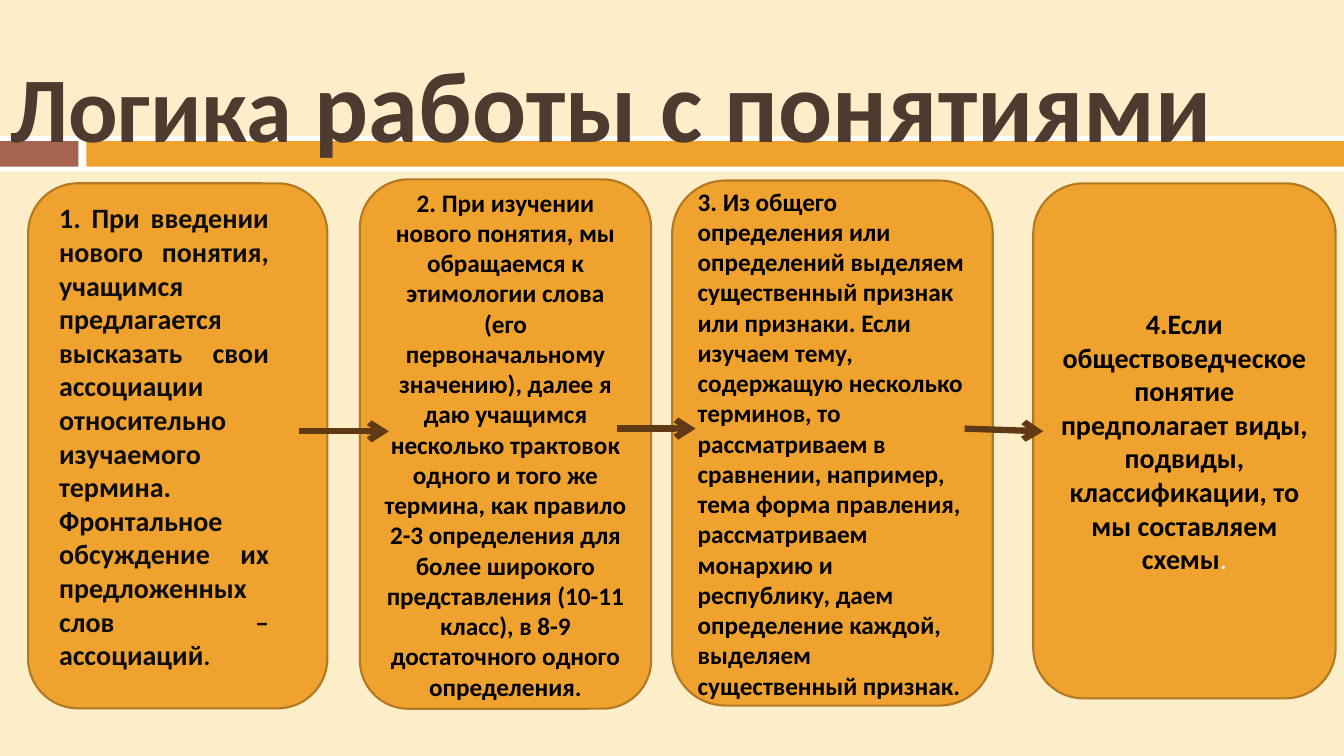
from pptx import Presentation
from pptx.dml.color import RGBColor
from pptx.enum.shapes import MSO_CONNECTOR as Connector, MSO_SHAPE as Shape
from pptx.enum.text import MSO_ANCHOR as Anchor, MSO_AUTO_SIZE as AutoSize, PP_ALIGN as Align
from pptx.oxml.ns import qn
from pptx.util import Cm, Pt
from lxml.etree import SubElement

COLORS = {
    "cream": "FBEEC9", "white": "FFFFFF", "brick": "A5644E", "amber": "F0A22E",
    "border": "B27822", "title": "4E3B30", "arrow": "603A14",
    "black": "000000", "ink": "0D0D0D",
}


def color(name):
    return RGBColor.from_string(COLORS[name])


def style(font, size, name):
    font.name = "Calibri"
    font.size = Pt(size)
    font.bold = True
    font.color.rgb = color(name)


deck = Presentation()
deck.slide_width, deck.slide_height = Cm(33.87), Cm(19.05)
page = deck.slides.add_slide(deck.slide_layouts[5])
page.background.fill.solid()
page.background.fill.fore_color.rgb = color("cream")

bands = [
    (0, 3.43, 33.87, 0.89, "white"),
    (0, 3.56, 1.98, 0.64, "brick"),
    (2.18, 3.56, 31.69, 0.64, "amber"),
]
for left, top, width, height, fill in bands:
    band = page.shapes.add_shape(Shape.RECTANGLE, Cm(left), Cm(top), Cm(width), Cm(height))
    band.shadow.inherit = False
    band.fill.solid()
    band.fill.fore_color.rgb = color(fill)
    band.line.fill.background()

title = page.shapes.title
title.left, title.top, title.width, title.height = Cm(0), Cm(3.07), Cm(33.87), Cm(1.45)
page.shapes._spTree.append(title._element)
frame = title.text_frame
frame.auto_size = AutoSize.NONE
frame.vertical_anchor = Anchor.BOTTOM
frame.margin_bottom = Cm(0.43)
para = frame.paragraphs[0]
para.alignment = Align.LEFT
for text, size in [("Логика", 66), (" работы с понятиями", 72)]:
    span = para.add_run()
    span.text = text
    style(span.font, size, "title")

cards = [
    (26.04, 4.62, 7.62, 12.98, 20, Align.CENTER,
     "4.Если обществоведческое понятие предполагает виды, подвиды, классификации, то мы составляем схемы"),
    (16.94, 4.55, 8.08, 13.23, 18, Align.LEFT,
     "3. Из общего определения или определений выделяем существенный признак или признаки. "
     "Если изучаем тему, содержащую несколько терминов, то рассматриваем в сравнении, например, "
     "тема форма правления, рассматриваем монархию и республику, даем определение каждой, "
     "выделяем существенный признак."),
    (9.07, 4.52, 7.34, 13.34, 18, Align.CENTER,
     "2. При изучении нового понятия, мы обращаемся к этимологии слова (его первоначальному значению), "
     "далее я даю учащимся несколько трактовок одного и того же термина, как правило 2-3 определения "
     "для более широкого представления (10-11 класс), в 8-9 достаточного одного определения."),
    (0.71, 4.62, 7.54, 13.23, 20, Align.LEFT, ""),
]
card_paras = []
for left, top, width, height, size, alignment, text in cards:
    card = page.shapes.add_shape(Shape.ROUNDED_RECTANGLE, Cm(left), Cm(top), Cm(width), Cm(height))
    card.shadow.inherit = False
    card.fill.solid()
    card.fill.fore_color.rgb = color("amber")
    card.line.color.rgb = color("border")
    card.line.width = Pt(1.5)
    card.text_frame.vertical_anchor = Anchor.MIDDLE
    para = card.text_frame.paragraphs[0]
    para.alignment = alignment
    style(para.font, size, "black")
    if text:
        para.add_run().text = text
    card_paras.append(para)

full_stop = card_paras[0].add_run()
full_stop.text = "."
full_stop.font.bold = False
full_stop.font.color.rgb = color("white")

arrows = [
    (7.54, 10.87, 9.8, 10.87),
    (24.31, 10.8, 26.29, 10.87),
    (15.54, 10.8, 17.53, 10.8),
]
for ends in arrows:
    arrow = page.shapes.add_connector(Connector.STRAIGHT, *map(Cm, ends))
    arrow.line.color.rgb = color("arrow")
    arrow.line.width = Pt(4.5)
    SubElement(arrow.line._get_or_add_ln(), qn("a:tailEnd"), type="arrow")
    SubElement(arrow._element.spPr, qn("a:effectLst"))

box = page.shapes.add_textbox(Cm(1.24), Cm(4.88), Cm(5.79), Cm(12.22))
frame = box.text_frame
frame.word_wrap = True
frame.auto_size = AutoSize.SHAPE_TO_FIT_TEXT
frame.vertical_anchor = Anchor.MIDDLE
para = frame.paragraphs[0]
para.alignment = Align.JUSTIFY
style(para.font, 20, "ink")
para.add_run().text = (
    "1. При введении нового понятия, учащимся предлагается высказать свои ассоциации "
    "относительно изучаемого термина. Фронтальное обсуждение их предложенных слов – ассоциаций"
)
full_stop = para.add_run()
full_stop.text = "."
full_stop.font.size = Pt(18)

deck.save("out.pptx")
